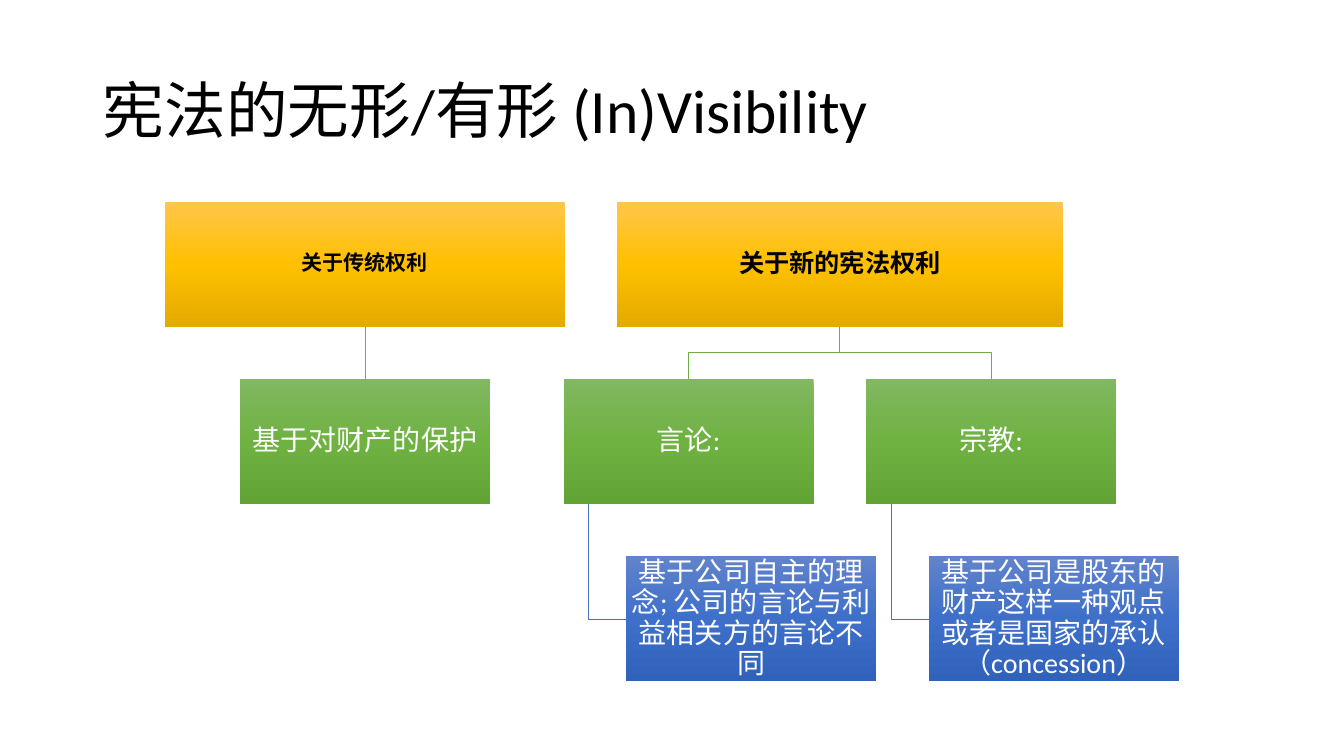
from copy import deepcopy

from pptx import Presentation
from pptx.dml.color import RGBColor
from pptx.enum.shapes import MSO_CONNECTOR, MSO_SHAPE
from pptx.enum.text import MSO_ANCHOR, MSO_AUTO_SIZE, PP_ALIGN
from pptx.oxml.ns import qn
from pptx.util import Pt

RECT, STRAIGHT = MSO_SHAPE.RECTANGLE, MSO_CONNECTOR.STRAIGHT
MIDDLE, LEFT, CENTER = MSO_ANCHOR.MIDDLE, PP_ALIGN.LEFT, PP_ALIGN.CENTER
NO_FIT = MSO_AUTO_SIZE.NONE

# Content: each root is (text, size, centre x, width, children),
# each child is (text, note below it or None)
TITLE = "宪法的无形/有形 (In)Visibility"
TREES = [
    ("关于传统权利", 15, 362, 396, [("基于对财产的保护", None)]),
    ("关于新的宪法权利", 18, 833, 442, [
        ("言论:", "基于公司自主的理念; 公司的言论与利益相关方的言论不同"),
        ("宗教:", "基于公司是股东的财产这样一种观点或者是国家的承认（concession）"),
    ]),
]

# Style and geometry, 100 px to the inch
FONT = "Calibri"
GRADIENTS = [("FFC64B", "FFC000", "E3AB00"),
             ("81B861", "6FB242", "62A336"),
             ("6183CB", "3E70CA", "3062BB")]
TEXT_COLORS = ["000000", "FFFFFF", "FFFFFF"]
CHILD_LINK, NOTE_LINK = "70AD47", "4472C4"
PX = 9144
TOP, BOX_W, BOX_H, GAP = 200, 248, 124, 52
CHILD_STEP, NOTE_INDENT, TRUNK_INDENT = 300, 62, 25


def rgb(value):
    return RGBColor.from_string(value)


def level_top(level):
    return TOP + level * (BOX_H + GAP)


def write(tf, text, size, color, align, bold=False):
    tf.text = text
    tf.word_wrap = True
    tf.auto_size = NO_FIT
    tf.vertical_anchor = MIDDLE
    p = tf.paragraphs[0]
    p.alignment = align
    p.line_spacing = 0.9
    font = p.runs[0].font
    font.name, font.size, font.bold = FONT, Pt(size), bold
    font.color.rgb = rgb(color)


def add_box(level, left, width, text, size=20):
    sp = s.shapes.add_shape(RECT, left * PX, level_top(level) * PX,
                            width * PX, BOX_H * PX)
    sp.shadow.inherit = False
    sp.line.fill.background()
    # Three-stop vertical gradient
    sp.fill.gradient()
    sp.fill.gradient_angle = 270
    stops = sp._element.spPr.find(".//" + qn("a:gsLst"))
    stops.insert(1, deepcopy(stops[0]))
    for i, (stop, color) in enumerate(zip(sp.fill.gradient_stops, GRADIENTS[level])):
        stop.position = i / 2
        stop.color.rgb = rgb(color)
    tf = sp.text_frame
    tf.margin_left = tf.margin_right = tf.margin_top = tf.margin_bottom = PX
    write(tf, text, size, TEXT_COLORS[level], CENTER, bold=level == 0)
    return sp


def style_link(link, color):
    link.line.color.rgb = rgb(color)
    link.line.width = Pt(0.5)


def add_bent_link(points, color):
    builder = s.shapes.build_freeform(*points[0], scale=PX)
    builder.add_line_segments(points[1:], close=False)
    link = builder.convert_to_shape()
    link.fill.background()
    link.shadow.inherit = False
    style_link(link, color)


def add_straight_link(parent, child, color):
    link = s.shapes.add_connector(STRAIGHT, 0, 0, 0, 0)
    link.begin_connect(parent, 2)
    link.end_connect(child, 0)
    link._element.spPr.get_or_add_ln()
    style_link(link, color)
    link._element.spPr.append(link._element.makeelement(qn("a:effectLst"), {}))


prs = Presentation()
prs.slide_width, prs.slide_height = 1333 * PX, 750 * PX
s = prs.slides.add_slide(prs.slide_layouts[5])

# Title
title = s.shapes.title
title.left, title.top, title.width, title.height = (
    v * PX for v in (92, 40, 1150, 145))
write(title.text_frame, TITLE, 44, "000000", LEFT)

# Trees of boxes with their links
for text, size, root_x, root_w, children in TREES:
    root = add_box(0, root_x - root_w // 2, root_w, text, size)
    for i, (child_text, note) in enumerate(children):
        x = root_x + CHILD_STEP * (2 * i - len(children) + 1) // 2
        left = x - BOX_W // 2
        child = add_box(1, left, BOX_W, child_text)
        if x == root_x:
            add_straight_link(root, child, CHILD_LINK)
        else:
            bend = level_top(1) - GAP // 2
            add_bent_link([(root_x, level_top(0) + BOX_H), (root_x, bend),
                           (x, bend), (x, level_top(1))], CHILD_LINK)
        if note:
            add_box(2, left + NOTE_INDENT, BOX_W, note)
            trunk, mid = left + TRUNK_INDENT, level_top(2) + BOX_H // 2
            add_bent_link([(trunk, level_top(1) + BOX_H), (trunk, mid),
                           (left + NOTE_INDENT, mid)], NOTE_LINK)

prs.save("out.pptx")
